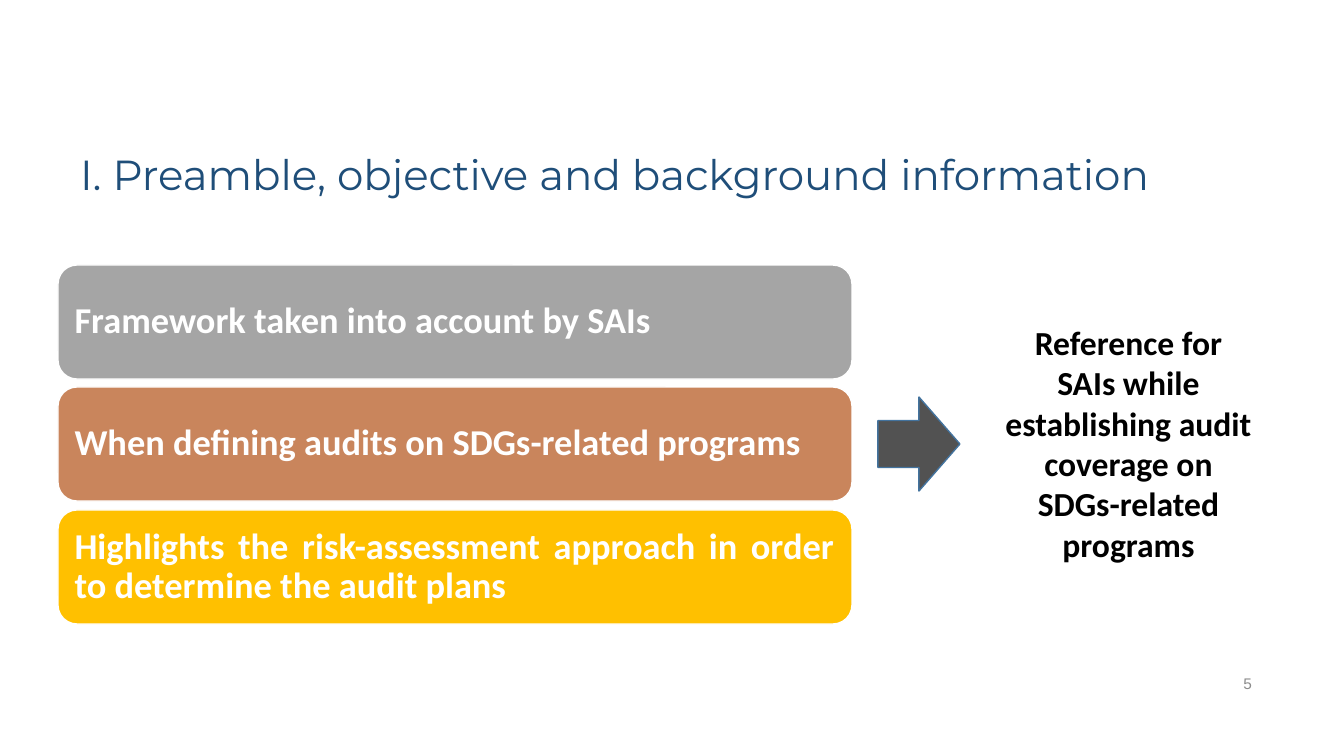
from pptx import Presentation
from pptx.dml.color import RGBColor
from pptx.enum.shapes import MSO_SHAPE
from pptx.enum.text import MSO_ANCHOR, MSO_AUTO_SIZE, PP_ALIGN
from pptx.util import Emu, Pt

ROUND, ARROW = MSO_SHAPE.ROUNDED_RECTANGLE, MSO_SHAPE.RIGHT_ARROW
TOP, MIDDLE = MSO_ANCHOR.TOP, MSO_ANCHOR.MIDDLE
LEFT, CENTER, RIGHT, JUSTIFY = PP_ALIGN.LEFT, PP_ALIGN.CENTER, PP_ALIGN.RIGHT, PP_ALIGN.JUSTIFY
FIXED = MSO_AUTO_SIZE.NONE

WHITE = RGBColor(0xFF, 0xFF, 0xFF)
BLACK = RGBColor(0x00, 0x00, 0x00)
NAVY = RGBColor(0x1F, 0x4E, 0x79)
BLUE = RGBColor(0x43, 0x73, 0x9E)
GRAY = RGBColor(0xA5, 0xA5, 0xA5)
CLAY = RGBColor(0xC9, 0x85, 0x5C)
GOLD = RGBColor(0xFF, 0xC0, 0x00)
DARK = RGBColor(0x52, 0x52, 0x52)
PALE = RGBColor(0x8C, 0x8C, 0x8C)

SCALE = 914400 / 100.8


def px(*nums):
    """Turn pixel lengths into EMU."""
    return [Emu(round(n * SCALE)) for n in nums]


def write(shape, text, face, size, color, align, anchor, bold=False):
    frame = shape.text_frame
    frame.text = text
    frame.word_wrap = True
    frame.auto_size = FIXED
    frame.vertical_anchor = anchor
    para = frame.paragraphs[0]
    para.alignment = align
    font = para.runs[0].font
    font.name, font.size, font.bold = face, Pt(size), bold
    font.color.rgb = color


prs = Presentation()
prs.slide_width, prs.slide_height = px(1344, 756)
slide = prs.slides.add_slide(prs.slide_layouts[5])
shapes = slide.shapes

title = shapes.title
title.left, title.top, title.width, title.height = px(70, 143, 1234, 61)
write(title, "I. Preamble, objective and background information",
      "Montserrat", 30, NAVY, LEFT, TOP)

points = [
    ("Framework taken into account by SAIs", GRAY, LEFT),
    ("When defining audits on SDGs-related programs", CLAY, JUSTIFY),
    ("Highlights the risk-assessment approach in order to determine the audit plans",
     GOLD, JUSTIFY),
]
for i, (text, fill, align) in enumerate(points):
    bar = shapes.add_shape(ROUND, *px(58, 265 + 245 * i // 2, 794, 114))
    bar.shadow.inherit = False
    bar.fill.solid()
    bar.fill.fore_color.rgb = fill
    bar.line.color.rgb = WHITE
    bar.line.width = Pt(1)
    write(bar, text, "Calibri", 26, WHITE, align, MIDDLE, True)
    frame = bar.text_frame
    frame.margin_left, frame.margin_top, frame.margin_right, frame.margin_bottom = px(11, 11, 11, 11)
    frame.paragraphs[0].line_spacing = 0.9

arrow = shapes.add_shape(ARROW, *px(878, 397, 82, 94))
arrow.shadow.inherit = False
arrow.fill.solid()
arrow.fill.fore_color.rgb = DARK
arrow.line.color.rgb = BLUE
arrow.line.width = Pt(1)

result = shapes.add_textbox(*px(994, 317, 269, 254))
write(result, "Reference for SAIs while establishing audit coverage on SDGs-related programs",
      "Calibri", 24, BLACK, CENTER, TOP, True)

number = shapes.add_textbox(*px(960, 663, 302, 40))
write(number, "5", "Arial", 11, PALE, RIGHT, MIDDLE)

prs.save("out.pptx")
